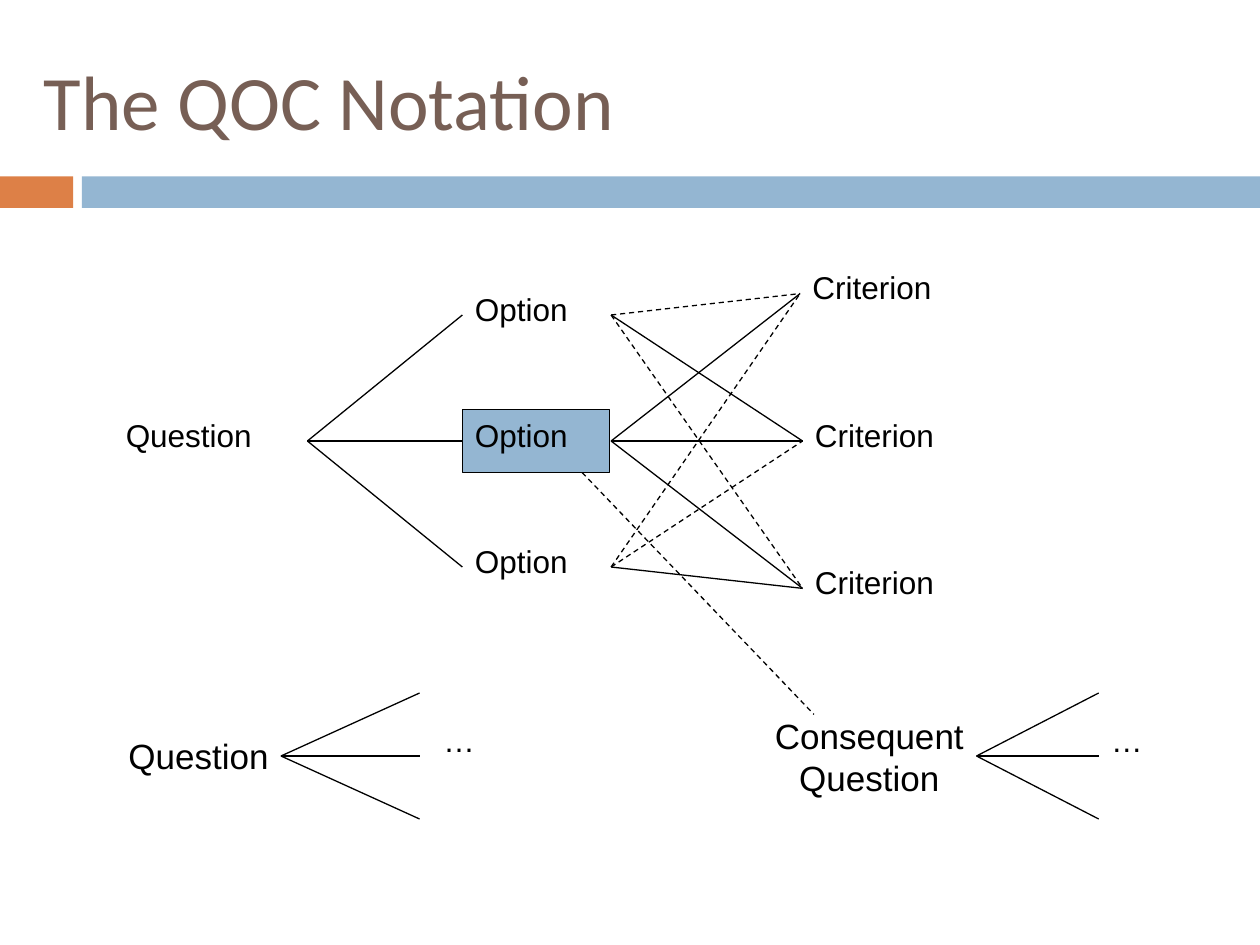
from lxml.etree import SubElement
from pptx import Presentation
from pptx.dml.color import RGBColor
from pptx.enum.dml import MSO_LINE
from pptx.enum.shapes import MSO_CONNECTOR, MSO_SHAPE
from pptx.enum.text import MSO_ANCHOR, PP_ALIGN
from pptx.oxml.ns import qn
from pptx.util import Inches, Pt

COLORS = {"title": "775F55", "accent": "DD8047", "blue": "94B6D2", "black": "000000"}

# Content: (text, left, top, width, height, size)
TITLE = "The QOC Notation"
MIDDLE = 3.5  # height of the middle row of the main diagram
OPTION_ROWS = [MIDDLE - 1, MIDDLE, MIDDLE + 1]
CRITERIA = [(6.35, 2.33), (6.37, 3.5), (6.37, 4.67)]
OPTION_LEFT, OPTION_RIGHT = 3.67, 4.85
LABELS = [("Question", 0.9, MIDDLE - 0.25, 1.54, 0.5, 18)]
LABELS += [("Option", OPTION_LEFT, row - 0.25, 1.18, 0.5, 18) for row in OPTION_ROWS]
LABELS += [("Criterion", left, row - 0.25, 1.46, 0.5, 18) for left, row in CRITERIA]
LABELS += [
    ("Question", 0.92, 5.78, 1.31, 0.43, 20),
    ("…", 3.42, 5.67, 0.53, 0.5, 18),
    ("Consequent\nQuestion", 6.05, 5.62, 1.7, 0.77, 20),
    ("…", 8.72, 5.67, 0.53, 0.5, 18),
]
# Fans of three lines: (start x, end x, middle y, spread)
FANS = [(2.44, OPTION_LEFT, MIDDLE, 1), (2.23, 3.33, 6, 0.5), (7.75, 8.72, 6, 0.5)]
# Option and criterion pairs that support each other; the rest are dashed
SUPPORTED = {(0, 1), (1, 0), (1, 1), (1, 2), (2, 2)}


def color(name):
    return RGBColor.from_string(COLORS[name])


def add_box(slide, left, top, width, height, fill, outlined=False):
    shape = slide.shapes.add_shape(
        MSO_SHAPE.RECTANGLE, Inches(left), Inches(top), Inches(width), Inches(height))
    shape.shadow.inherit = False
    shape.fill.solid()
    shape.fill.fore_color.rgb = color(fill)
    if outlined:
        shape.line.color.rgb = color("black")
        shape.line.width = Pt(0.75)
    else:
        shape.line.fill.background()


def add_text(slide, text, left, top, width, height, size,
             font="Arial", text_color="black", anchor=MSO_ANCHOR.TOP):
    box = slide.shapes.add_textbox(Inches(left), Inches(top), Inches(width), Inches(height))
    frame = box.text_frame
    frame.word_wrap = True
    frame.vertical_anchor = anchor
    frame.margin_right = 0
    paragraph = frame.paragraphs[0]
    paragraph.text = text
    if "\n" in text:
        frame.margin_left = 0
        paragraph.alignment = PP_ALIGN.CENTER
    paragraph.font.size = Pt(size)
    paragraph.font.name = font
    paragraph.font.color.rgb = color(text_color)


def add_line(slide, start, end, dashed=False):
    connector = slide.shapes.add_connector(
        MSO_CONNECTOR.STRAIGHT, *(Inches(value) for value in (*start, *end)))
    connector.line.color.rgb = color("black")
    connector.line.width = Pt(0.75)
    if dashed:
        connector.line.dash_style = MSO_LINE.DASH
    SubElement(connector._element.spPr, qn("a:effectLst"))


def main():
    presentation = Presentation()
    presentation.slide_width, presentation.slide_height = Inches(10), Inches(7.5)
    slide = presentation.slides.add_slide(presentation.slide_layouts[6])

    # Title and band
    add_box(slide, 0, 1.4, 0.58, 0.25, "accent")
    add_box(slide, 0.65, 1.4, 9.35, 0.25, "blue")
    add_text(slide, TITLE, 0.25, 0.25, 9.58, 1.08, 44, "Calibri", "title", MSO_ANCHOR.MIDDLE)

    # Chosen option and labels
    add_box(slide, OPTION_LEFT, MIDDLE - 0.25, 1.17, 0.5, "blue", outlined=True)
    for label in LABELS:
        add_text(slide, *label)

    # Lines from questions
    for start_x, end_x, middle, spread in FANS:
        for step in (-1, 0, 1):
            add_line(slide, (start_x, middle), (end_x, middle + step * spread))

    # Lines from options to criteria
    for option, row in enumerate(OPTION_ROWS):
        for criterion, end in enumerate(CRITERIA):
            add_line(slide, (OPTION_RIGHT, row), end, (option, criterion) not in SUPPORTED)

    # Chosen option leads to the consequent question
    add_line(slide, (4.62, MIDDLE + 0.25), (6.46, 5.67), dashed=True)
    presentation.save("out.pptx")


if __name__ == "__main__":
    main()
